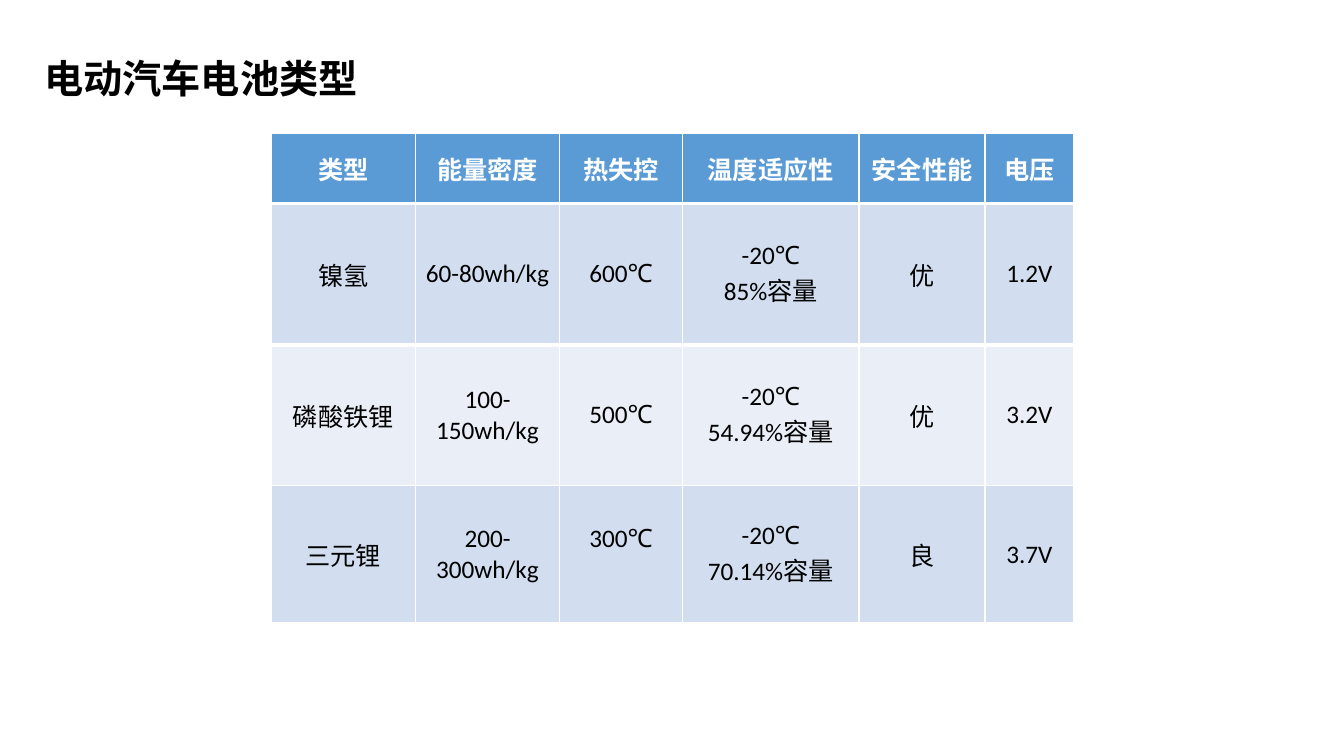
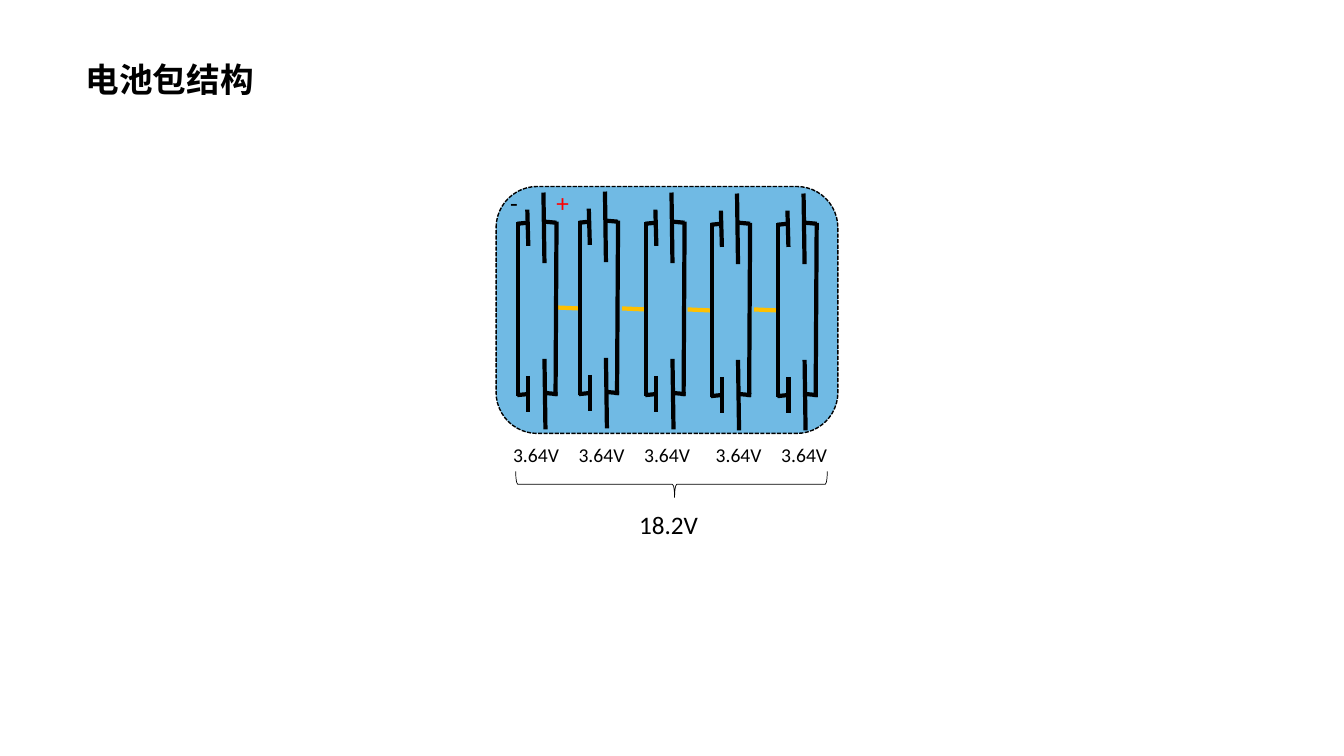
from lxml.etree import SubElement
from pptx import Presentation
from pptx.dml.color import RGBColor
from pptx.enum.dml import MSO_LINE
from pptx.enum.shapes import MSO_CONNECTOR, MSO_SHAPE
from pptx.enum.text import MSO_ANCHOR, MSO_AUTO_SIZE, PP_ALIGN
from pptx.oxml.ns import qn
from pptx.util import Inches, Pt

FONT = "Calibri"
BLACK, WHITE, RED, AMBER = "000000", "FFFFFF", "FF0000", "FFC000"
HEADER_BLUE, BAND_DARK, BAND_LIGHT = "5B9BD5", "D2DEEF", "EAEFF7"
PACK_BLUE = "70BAE4"

color = RGBColor.from_string


def write(frame, text, size=18, ink=BLACK, bold=False, align=PP_ALIGN.LEFT,
          anchor=MSO_ANCHOR.TOP, wrap=False):
    """Fill a text frame, one paragraph for each line of text."""
    frame.text = text
    frame.word_wrap = wrap
    frame.vertical_anchor = anchor
    for paragraph in frame.paragraphs:
        paragraph.alignment = align
        font = paragraph.font
        font.name, font.size, font.bold = FONT, Pt(size), bold
        font.color.rgb = color(ink)


def wire(slide, x1, y1, x2, y2, ink=BLACK):
    """Draw a 3 pt straight line without a shadow."""
    line = slide.shapes.add_connector(
        MSO_CONNECTOR.STRAIGHT, Inches(x1), Inches(y1), Inches(x2), Inches(y2))
    line.line.color.rgb = color(ink)
    line.line.width = Pt(3)
    SubElement(line._element.spPr, qn("a:effectLst"))


deck = Presentation()
deck.slide_width, deck.slide_height = Inches(13.33), Inches(7.5)

# Slides and their titles
slides = []
for heading, size, box in [
    ("电动汽车电池类型", 28, (0.34, 0.49, 3.31, 0.57)),
    ("电池包结构", 24, (0.75, 0.53, 1.87, 0.5)),
]:
    slide = deck.slides.add_slide(deck.slide_layouts[5])
    title = slide.shapes.title
    title.left, title.top, title.width, title.height = map(Inches, box)
    write(title.text_frame, heading, size=size, bold=True)
    title.text_frame.auto_size = MSO_AUTO_SIZE.NONE
    slides.append(slide)
types_slide, pack_slide = slides

# Battery types: comparison table
battery_types = [
    ["类型", "能量密度", "热失控", "温度适应性", "安全性能", "电压"],
    ["镍氢", "60-80wh/kg", "600℃", "-20℃\n85%容量", "优", "1.2V"],
    ["磷酸铁锂", "100-150wh/kg", "500℃", "-20℃\n54.94%容量", "优", "3.2V"],
    ["三元锂", "200-300wh/kg", "300℃", "-20℃\n70.14%容量", "良", "3.7V"],
]
column_widths = [1.43, 1.43, 1.22, 1.75, 1.25, 0.88]
row_heights = [0.7, 1.4, 1.4, 1.36]
comparison = types_slide.shapes.add_table(
    len(row_heights), len(column_widths), Inches(2.69), Inches(1.32),
    Inches(sum(column_widths)), Inches(sum(row_heights))).table
for column, width in zip(comparison.columns, column_widths):
    column.width = Inches(width)
for r, (row, height) in enumerate(zip(battery_types, row_heights)):
    comparison.rows[r].height = Inches(height)
    is_header = r == 0
    band = HEADER_BLUE if is_header else BAND_DARK if r % 2 else BAND_LIGHT
    for c, text in enumerate(row):
        cell = comparison.cell(r, c)
        # Thick white rule between the header and the first body row
        if r < 2:
            edge = SubElement(cell._tc.get_or_add_tcPr(),
                              qn("a:lnB" if is_header else "a:lnT"), w=str(Pt(3)))
            SubElement(SubElement(edge, qn("a:solidFill")), qn("a:srgbClr"), val=WHITE)
        cell.fill.solid()
        cell.fill.fore_color.rgb = color(band)
        write(cell.text_frame, text, ink=WHITE if is_header else BLACK,
              bold=is_header, align=PP_ALIGN.CENTER, wrap=True)
        cell.vertical_anchor = MSO_ANCHOR.MIDDLE
# The last runaway temperature sits above the middle of its cell
comparison.cell(3, 2).margin_bottom = Inches(0.35)

# Battery pack: housing
housing = pack_slide.shapes.add_shape(
    MSO_SHAPE.ROUNDED_RECTANGLE, Inches(4.92), Inches(1.85), Inches(3.39), Inches(2.45))
housing.shadow.inherit = False
housing.fill.solid()
housing.fill.fore_color.rgb = color(PACK_BLUE)
housing.line.color.rgb = color(BLACK)
housing.line.width = Pt(1)
housing.line.dash_style = MSO_LINE.SQUARE_DOT

# Series links between neighbouring cell pairs
pair_origins = [(5.13, 1.91), (5.74, 1.9), (6.4, 1.91), (7.05, 1.92), (7.71, 1.92)]
for x, y in pair_origins[1:]:
    wire(pack_slide, x, y + 1.16, x - 0.23, y + 1.15, ink=AMBER)

# Parallel cell pairs, each drawn from its own origin
pair_wires = [
    (0.1, 0.17, 0.11, 0.53), (0.26, 0, 0.27, 0.7),          # upper plates
    (0.11, 1.82, 0.11, 2.18), (0.27, 1.65, 0.28, 2.35),     # lower plates
    (0.01, 0.29, 0.01, 2.02), (0.39, 0.29, 0.38, 2.02),     # side bars
    (0, 0.31, 0.1, 0.3), (0, 2.01, 0.1, 2),                 # left leads
    (0.39, 0.3, 0.28, 0.29), (0.4, 2, 0.29, 1.99),          # right leads
]
for x, y in pair_origins:
    for x1, y1, x2, y2 in pair_wires:
        wire(pack_slide, x + x1, y + y1, x + x2, y + y2)

# Brace over the total voltage
brace = pack_slide.shapes.add_shape(
    MSO_SHAPE.LEFT_BRACE, Inches(6.53), Inches(3.26), Inches(0.26), Inches(3.09))
brace.rotation = 270
brace.adjustments[0], brace.adjustments[1] = 0.08, 0.51
brace.shadow.inherit = False
brace.fill.background()
brace.line.color.rgb = color(BLACK)
brace.line.width = Pt(0.5)

# Pole signs, pair voltages and total
labels = [
    ("-", 18, BLACK, (4.96, 1.81, 0.28, 0.4)),
    ("+", 18, RED, (5.42, 1.81, 0.32, 0.4)),
    ("18.2V", 18, BLACK, (6.24, 5, 0.9, 0.4)),
]
labels += [("3.64V", 14, BLACK, (left, 4.34, 0.7, 0.34))
           for left in (4.99, 5.64, 6.29, 7, 7.65)]
for text, size, ink, box in labels:
    label = pack_slide.shapes.add_textbox(*map(Inches, box))
    # Wrapping is on, in boxes wide enough for one line, to hold the left edge
    write(label.text_frame, text, size=size, ink=ink, wrap=True)

deck.save("out.pptx")
